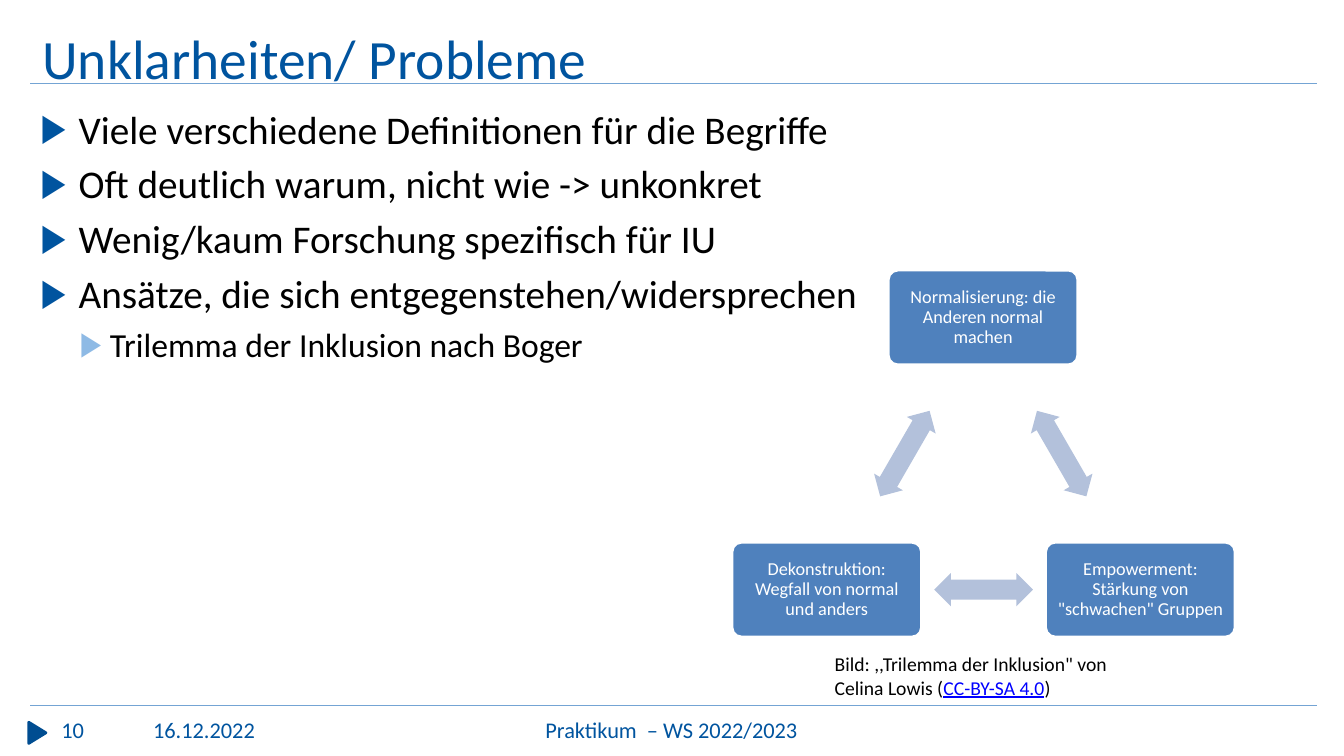
"""Build the slide on open problems with the trilemma diagram."""
from pptx import Presentation
from pptx.dml.color import RGBColor
from pptx.enum.shapes import MSO_CONNECTOR, MSO_SHAPE
from pptx.enum.text import MSO_ANCHOR, MSO_AUTO_SIZE, PP_ALIGN
from pptx.oxml.ns import qn
from pptx.util import Inches, Pt
from lxml.etree import SubElement

FONT = "Calibri"
BLUE, PALE, RULE = "00549F", "8EBAE5", "74A4D4"
TITLE = "Unklarheiten/ Probleme"
POINTS = [
    (0, "Viele verschiedene Definitionen für die Begriffe"),
    (0, "Oft deutlich warum, nicht wie -> unkonkret"),
    (0, "Wenig/kaum Forschung spezifisch für IU"),
    (0, "Ansätze, die sich entgegenstehen/widersprechen"),
    (1, "Trilemma der Inklusion nach Boger"),
]
LEVELS = [(28, 0.38, 0.38, BLUE), (24, 0.69, 0.3, PALE)]
NODES = [
    (9.75, 3.15, "Normalisierung: die Anderen normal machen"),
    (11.31, 5.85, 'Empowerment: Stärkung von "schwachen" Gruppen'),
    (8.2, 5.85, "Dekonstruktion: Wegfall von normal und anders"),
]
TURNS = [60, 0, 300]
NODE_W, NODE_H = 1.88, 0.94
ARROW_W, ARROW_H = 0.98, 0.33
FOOTER = [
    (0.51, 0.7, PP_ALIGN.LEFT, "10"),
    (3.25, 6.82, PP_ALIGN.CENTER, "Praktikum\u00a0 – WS 2022/2023".replace("\u00a0", " ")),
    (1.42, 1.57, PP_ALIGN.LEFT, "16.12.2022"),
]
CREDIT = [
    ('Bild: ,,Trilemma der Inklusion" von Celina Lowis (', "000000", False),
    ("CC-BY-SA 4.0", "0000FF", True),
    (")", "000000", False),
]


def color(text):
    return RGBColor.from_string(text)


def style(run, size, tone):
    run.font.name = FONT
    run.font.size = Pt(size)
    run.font.color.rgb = color(tone)


def place(shape, *box):
    shape.left, shape.top, shape.width, shape.height = map(Inches, box)


def add_text(slide, *box):
    frame = slide.shapes.add_textbox(*map(Inches, box)).text_frame
    frame.word_wrap = True
    return frame


def add_shape(slide, kind, x, y, w, h, fill, line=None):
    """Add a flat shape centred on x, y."""
    box = map(Inches, (x - w / 2, y - h / 2, w, h))
    shape = slide.shapes.add_shape(kind, *box)
    shape.shadow.inherit = False
    shape.fill.solid()
    shape.fill.fore_color.rgb = color(fill)
    if line:
        shape.line.color.rgb = color(line)
        shape.line.width = Pt(2)
    else:
        shape.line.fill.background()
    return shape


def add_rule(slide, y):
    ends = map(Inches, (13.06, y, 0.3, y))
    rule = slide.shapes.add_connector(MSO_CONNECTOR.STRAIGHT, *ends)
    rule.line.color.rgb = color(RULE)
    rule.line.width = Pt(0.75)
    SubElement(rule._element.spPr, qn("a:effectLst"))


def set_bullet(para, indent, hang, tone):
    props = para._p.get_or_add_pPr()
    props.set("marL", str(Inches(indent)))
    props.set("indent", str(-Inches(hang)))
    fill = SubElement(SubElement(props, qn("a:buClr")), qn("a:srgbClr"))
    fill.set("val", tone)
    SubElement(props, qn("a:buFont")).set("typeface", FONT)
    SubElement(props, qn("a:buChar")).set("char", "▶")


def add_title(slide):
    title = slide.shapes.title
    place(title, 0.32, 0.29, 12.74, 0.55)
    frame = title.text_frame
    frame.text = TITLE
    frame.auto_size = MSO_AUTO_SIZE.NONE
    frame.vertical_anchor = MSO_ANCHOR.MIDDLE
    para = frame.paragraphs[0]
    para.alignment = PP_ALIGN.LEFT
    style(para.runs[0], 39.6, BLUE)


def add_points(slide):
    body = slide.placeholders[1]
    place(body, 0.3, 0.99, 12.76, 5.91)
    frame = body.text_frame
    frame.text = "\n".join(text for _, text in POINTS)
    frame.auto_size = MSO_AUTO_SIZE.NONE
    for para, (level, _) in zip(frame.paragraphs, POINTS):
        size, indent, hang, tone = LEVELS[level]
        para.level = level
        set_bullet(para, indent, hang, tone)
        style(para.runs[0], size, "000000")


def add_cycle(slide):
    for i, (x, y, text) in enumerate(NODES):
        node = add_shape(slide, MSO_SHAPE.ROUNDED_RECTANGLE, x, y,
                         NODE_W, NODE_H, "4F81BD", "FFFFFF")
        node.adjustments[0] = 0.1
        frame = node.text_frame
        frame.text = text
        frame.word_wrap = True
        frame.vertical_anchor = MSO_ANCHOR.MIDDLE
        frame.margin_left = frame.margin_right = Inches(0.08)
        frame.margin_top = frame.margin_bottom = Inches(0.08)
        para = frame.paragraphs[0]
        para.alignment = PP_ALIGN.CENTER
        para.line_spacing = 0.9
        style(para.runs[0], 13, "FFFFFF")

        far_x, far_y, _ = NODES[(i + 1) % len(NODES)]
        arrow = add_shape(slide, MSO_SHAPE.LEFT_RIGHT_ARROW,
                          (x + far_x) / 2, (y + far_y) / 2,
                          ARROW_W, ARROW_H, "B3C1DB")
        arrow.adjustments[0] = 0.6
        arrow.adjustments[1] = 0.5
        arrow.rotation = TURNS[i]


def add_credit(slide):
    para = add_text(slide, 8.18, 6.42, 3, 0.57).paragraphs[0]
    for text, tone, under in CREDIT:
        run = para.add_run()
        run.text = text
        style(run, 14, tone)
        run.font.underline = under


def add_footer(slide):
    mark = add_shape(slide, MSO_SHAPE.ISOSCELES_TRIANGLE, 0.37, 7.27,
                     0.21, 0.17, "004D91", "004D91")
    mark.rotation = 90
    for x, width, align, text in FOOTER:
        frame = add_text(slide, x, 7.06, width, 0.4)
        frame.text = text
        para = frame.paragraphs[0]
        para.alignment = align
        style(para.runs[0], 16, BLUE)


def main():
    deck = Presentation()
    deck.slide_width, deck.slide_height = Inches(13.33), Inches(7.5)
    slide = deck.slides.add_slide(deck.slide_layouts[1])
    for y in (0.83, 7):
        add_rule(slide, y)
    add_title(slide)
    add_points(slide)
    add_footer(slide)
    add_cycle(slide)
    add_credit(slide)
    deck.save("out.pptx")


if __name__ == "__main__":
    main()
